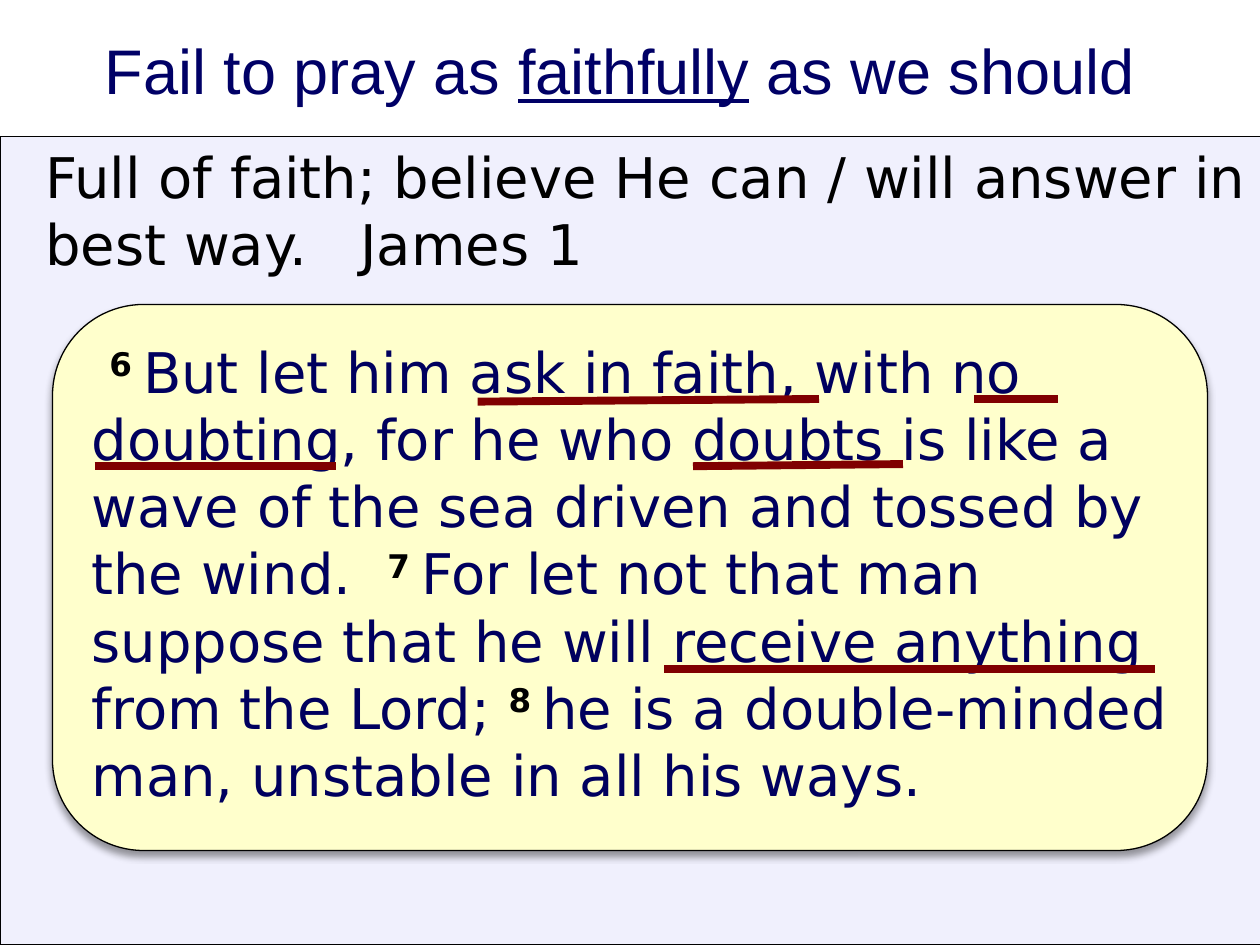
from dataclasses import dataclass

from lxml import etree
from pptx import Presentation
from pptx import util as u
from pptx.dml.color import RGBColor
from pptx.enum import shapes, text
from pptx.oxml.ns import qn

WHITE = RGBColor(0xFF, 0xFF, 0xFF)
BLACK = RGBColor(0x00, 0x00, 0x00)
PAPER = RGBColor(0xFD, 0xFD, 0xFD)
LAVENDER = RGBColor(0x99, 0x99, 0xFF)
CREAM = RGBColor(0xFF, 0xFF, 0xCC)
TITLE_NAVY = RGBColor(0x00, 0x00, 0x66)
VERSE_NAVY = RGBColor(0x00, 0x00, 0x5E)
MAROON = RGBColor(0x80, 0x00, 0x00)

BODY_FONT = "DejaVu Sans"
TITLE_FONT = "Arial"
COLUMNS, ROWS = 120, 90

deck = Presentation()
deck.slide_width, deck.slide_height = u.Inches(10), u.Inches(7.5)
page = deck.slides.add_slide(deck.slide_layouts[6])


@dataclass(frozen=True)
class Area:
    column: float
    row: float
    columns: float
    rows: float


@dataclass(frozen=True)
class Stroke:
    """Emphasis under some words, from one grid point to another."""
    column: float
    row: float
    end_column: float
    end_row: float


TITLE = Area(0, 0, 120, 13)
PANEL = Area(0, 13, 120.25, 77)
CARD = Area(5, 29, 110, 52)

STROKES = (
    Stroke(45.5, 38.25, 78, 38),
    Stroke(9, 44.4, 32, 44.4),
    Stroke(92.75, 38, 100.8, 38),
    Stroke(66, 44.4, 86, 44.2),
    Stroke(63.25, 63.75, 110, 63.75),
)

VERSES = (
    ("6", "But let him ask in faith, with no doubting, for he who doubts is like a "
          "wave of the sea driven and tossed by the wind.  "),
    ("7", "For let not that man suppose that he will receive anything from the Lord; "),
    ("8", "he is a double-minded man, unstable in all his ways."),
)


def across(columns: float) -> int:
    return round(deck.slide_width * columns / COLUMNS)


def down(rows: float) -> int:
    return round(deck.slide_height * rows / ROWS)


def add_box(area: Area, fill: RGBColor, preset=shapes.MSO_SHAPE.RECTANGLE,
            outlined: bool = True, anchor=text.MSO_ANCHOR.TOP):
    box = page.shapes.add_shape(preset, across(area.column), down(area.row),
                                across(area.columns), down(area.rows))
    box.shadow.inherit = False
    box.fill.solid()
    box.fill.fore_color.rgb = fill
    if outlined:
        box.line.color.rgb = BLACK
        box.line.width = u.Pt(0.75)
    else:
        box.line.fill.background()
    box.text_frame.word_wrap = True
    box.text_frame.vertical_anchor = anchor
    box.text_frame.paragraphs[0].alignment = text.PP_ALIGN.LEFT
    return box


def add_text(para, words: str, *, size: float = 32, font: str = BODY_FONT,
             color: RGBColor = BLACK, bold: bool = False,
             underline: bool = False, raised: bool = False) -> None:
    span = para.add_run()
    span.text = words
    span.font.size, span.font.name = u.Pt(size), font
    span.font.bold, span.font.underline = bold, underline
    span.font.color.rgb = color
    if raised:
        span.font._element.set("baseline", "30000")


def add_alpha(color_element, percent: int) -> None:
    etree.SubElement(color_element, qn("a:alpha"), val=str(percent * 1000))


def add_drop_shadow(box) -> None:
    effects = box._element.spPr.find(qn("a:effectLst"))
    shadow = etree.SubElement(effects, qn("a:outerShdw"), blurRad=str(u.Pt(4)),
                              dist=str(u.Pt(3)), dir="5400000", rotWithShape="0")
    add_alpha(etree.SubElement(shadow, qn("a:srgbClr"), val=str(BLACK)), 40)


def add_stroke(stroke: Stroke) -> None:
    line = page.shapes.add_connector(
        shapes.MSO_CONNECTOR.STRAIGHT, across(stroke.column), down(stroke.row),
        across(stroke.end_column), down(stroke.end_row))
    line.line.color.rgb = MAROON
    line.line.width = u.Pt(4.5)
    etree.SubElement(line._element.spPr, qn("a:effectLst"))


def build_title() -> None:
    box = add_box(TITLE, WHITE, outlined=False, anchor=text.MSO_ANCHOR.MIDDLE)
    para = box.text_frame.paragraphs[0]
    para.alignment = text.PP_ALIGN.CENTER
    for words, underline in (("Fail to pray as ", False), ("faithfully", True),
                             (" as we should", False)):
        add_text(para, words, size=36, font=TITLE_FONT, color=TITLE_NAVY,
                 underline=underline)
    add_text(para, " ", size=37, color=TITLE_NAVY)


def build_panel() -> None:
    box = add_box(PANEL, LAVENDER)
    add_alpha(box._element.spPr.find(qn("a:solidFill"))[0], 12)
    para = box.text_frame.paragraphs[0]
    para.space_after = u.Pt(9)
    para._p.get_or_add_pPr().set("marL", str(u.Inches(0.26)))
    add_text(para, "Full of faith; believe He can / will answer in best way.   James 1")


def build_card() -> None:
    box = add_box(CARD, CREAM, shapes.MSO_SHAPE.ROUNDED_RECTANGLE)
    add_drop_shadow(box)
    para = box.text_frame.paragraphs[0]
    add_text(para, " ")
    for number, words in VERSES:
        add_text(para, number + " ", bold=True, raised=True)
        add_text(para, words, color=VERSE_NAVY)


def main() -> None:
    page.background.fill.solid()
    page.background.fill.fore_color.rgb = PAPER
    build_title()
    build_panel()
    build_card()
    for stroke in STROKES:
        add_stroke(stroke)
    deck.save("out.pptx")


if __name__ == "__main__":
    main()
